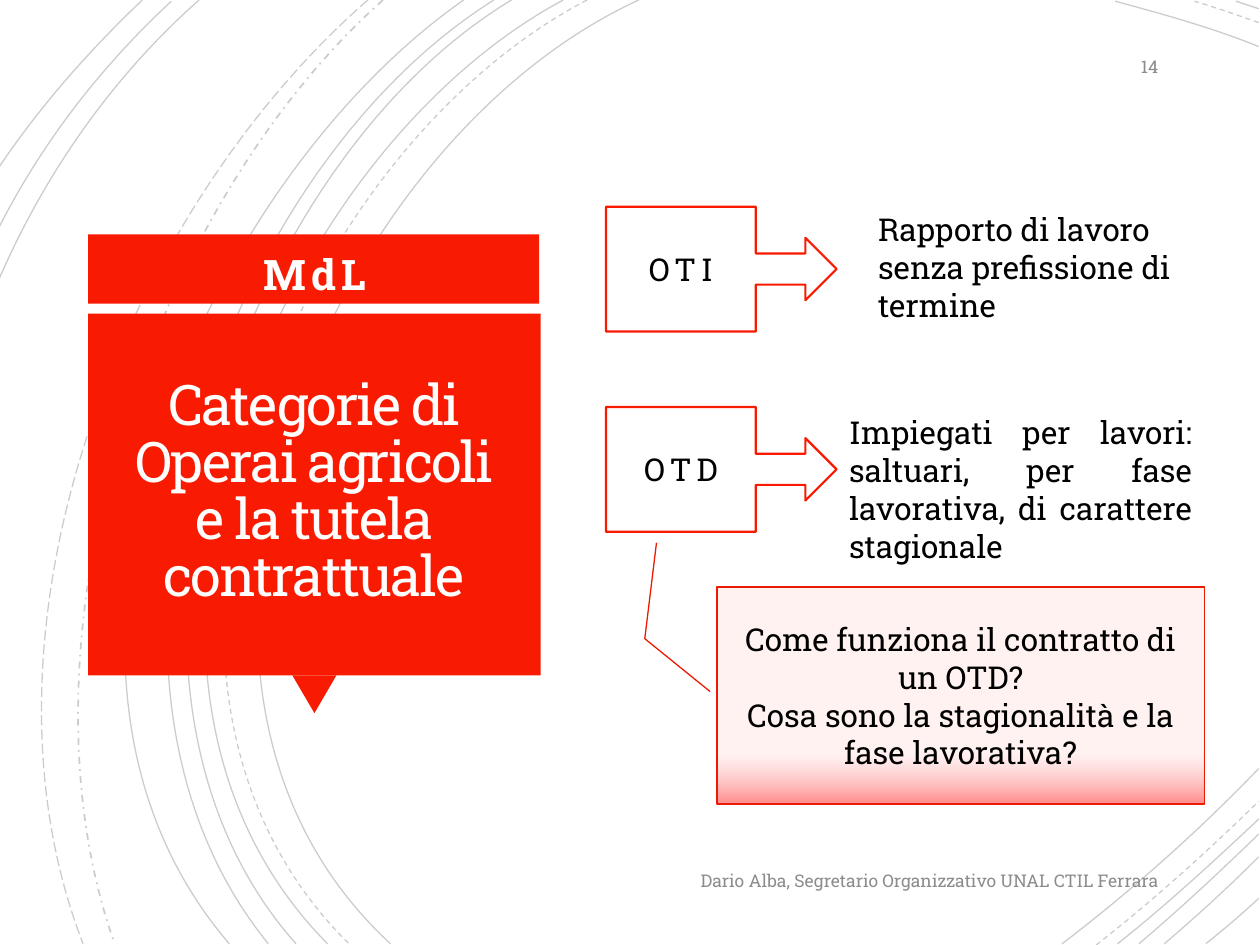
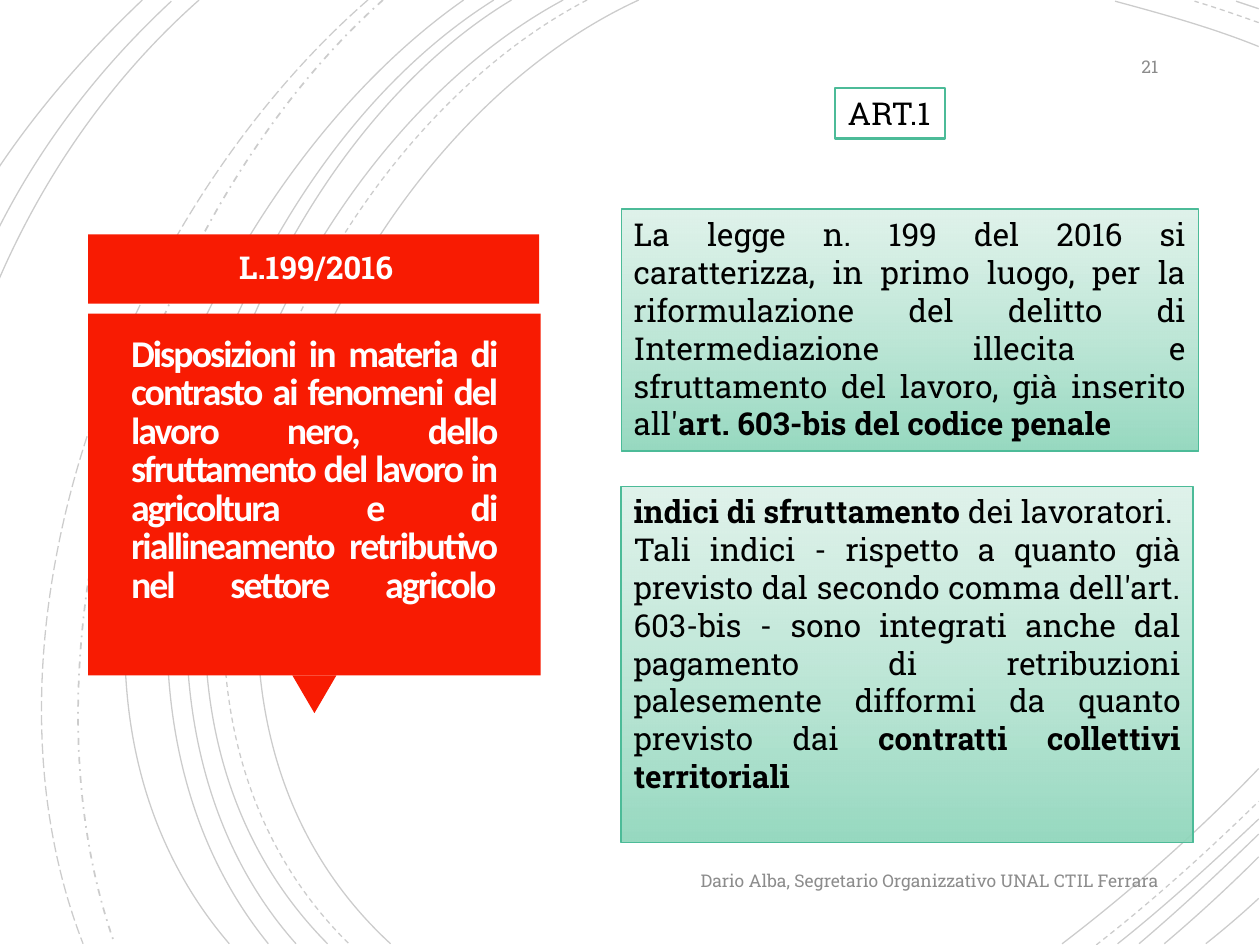
from lxml.etree import SubElement
from pptx import Presentation
from pptx.dml.color import RGBColor
from pptx.enum.dml import MSO_LINE
from pptx.enum.shapes import MSO_SHAPE
from pptx.enum.text import MSO_ANCHOR, MSO_AUTO_SIZE, PP_ALIGN
from pptx.oxml.ns import qn
from pptx.util import Inches, Pt

rgb = RGBColor.from_string
SLAB = "Roboto Slab"
RED, DARK_RED, GREEN = "F81B02", "ED1A02", "4CBB98"
WHITE, TITLE_WHITE, BLACK, GREY = "FFFFFF", "FFFEFF", "000000", "8C8C8C"
LEFT, CENTER, RIGHT, JUSTIFY = PP_ALIGN.LEFT, PP_ALIGN.CENTER, PP_ALIGN.RIGHT, PP_ALIGN.JUSTIFY
TOP, MIDDLE = MSO_ANCHOR.TOP, MSO_ANCHOR.MIDDLE
FOOTER = "Dario Alba, Segretario Organizzativo UNAL CTIL Ferrara"

# Gradient stops: position, colour, opacity in percent
PINK_FADE = [(0.77, "FFCECD", 27), (1, "FF807F", 92)]
GREEN_FADE = [(0, "CAEADD", 60), (1, "8ED6BB", 92)]

# Background arcs: start, two control points, end
SOLID, DASH, DASH_DOT, LONG_DASH = (
    MSO_LINE.SOLID, MSO_LINE.DASH, MSO_LINE.DASH_DOT, MSO_LINE.LONG_DASH)
ARCS = [
    (SOLID, (5.07, 0), (2.56, 1.15), (0.83, 5.4), (3.1, 7.49)),
    (SOLID, (9.99, 0.37), (9.62, 0.22), (9.22, 0.11), (8.85, 0.01)),
    (SOLID, (8.43, 7.49), (8.98, 7.07), (9.51, 6.6), (9.99, 6.1)),
    (DASH, (4.66, 0), (2.26, 1.25), (0.63, 5.38), (2.77, 7.49)),
    (DASH, (9.99, 0.18), (9.82, 0.12), (9.65, 0.06), (9.48, 0.01)),
    (DASH, (8.7, 7.5), (9.15, 7.15), (9.58, 6.76), (9.99, 6.36)),
    (SOLID, (4.47, 0), (2.11, 1.27), (0.5, 5.37), (2.6, 7.49)),
    (SOLID, (9.99, 0.07), (9.93, 0.05), (9.87, 0.03), (9.81, 0.01)),
    (SOLID, (8.87, 7.49), (9.26, 7.18), (9.63, 6.84), (9.99, 6.5)),
    (SOLID, (4.06, 0), (1.85, 1.33), (0.5, 5.41), (2.35, 7.49)),
    (SOLID, (9.04, 7.49), (9.37, 7.21), (9.68, 6.92), (9.99, 6.62)),
    (SOLID, (3.92, 0), (1.72, 1.38), (0.38, 5.34), (2.13, 7.49)),
    (SOLID, (9.24, 7.49), (9.5, 7.27), (9.75, 7.04), (9.99, 6.8)),
    (SOLID, (3.68, 0), (1.58, 1.47), (-0.07, 5.29), (1.82, 7.49)),
    (SOLID, (9.57, 7.49), (9.71, 7.38), (9.85, 7.26), (9.99, 7.13)),
    (DASH_DOT, (3.04, 0), (1.17, 1.66), (0.06, 5.09), (0.91, 7.49)),
    (LONG_DASH, (2.92, 0), (0.98, 1.69), (-0.31, 4.99), (0.66, 7.49)),
    (SOLID, (1.58, 0), (0.88, 0.62), (0.35, 1.39), (-0.01, 2.22)),
    (SOLID, (1.36, 0.01), (0.79, 0.54), (0.33, 1.14), (-0.01, 1.81)),
    (SOLID, (1.13, 0), (0.71, 0.4), (0.32, 0.84), (-0.01, 1.33)),
]


def add_box(s, kind, at, fill, line=None, width=0.75):
    """Add a preset shape; fill is one colour or a list of gradient stops."""
    sp = s.shapes.add_shape(kind, *map(Inches, at))
    sp.shadow.inherit = False
    if isinstance(fill, str):
        sp.fill.solid()
        sp.fill.fore_color.rgb = rgb(fill)
    else:
        sp.fill.gradient()
        sp.fill.gradient_angle = 270
        for stop, (position, color, opacity) in zip(sp.fill.gradient_stops, fill):
            stop.position = position
            stop.color.rgb = rgb(color)
        colors = sp._element.spPr.iter(qn("a:srgbClr"))
        for element, (position, color, opacity) in zip(colors, fill):
            SubElement(element, qn("a:alpha"), val=str(opacity * 1000))
    if line:
        sp.line.color.rgb = rgb(line)
        sp.line.width = Pt(width)
    else:
        sp.line.fill.background()
    return sp


def write(sp, paragraphs, size=18, color=BLACK, font=SLAB, anchor=TOP, spacing=0, wrap=True):
    """Fill a shape with paragraphs of (alignment, (text, bold), ...)."""
    tf = sp.text_frame
    tf.word_wrap = wrap
    tf.vertical_anchor = anchor
    if not wrap:
        tf.auto_size = MSO_AUTO_SIZE.SHAPE_TO_FIT_TEXT
    for i, (align, *runs) in enumerate(paragraphs):
        p = tf.add_paragraph() if i else tf.paragraphs[0]
        p.alignment = align
        p.font.name, p.font.size = font, Pt(size)
        p.font.color.rgb = rgb(color)
        for text, bold in runs:
            r = p.add_run()
            r.text = text
            r.font.bold = bold
            if spacing:
                r._r.get_or_add_rPr().set("spc", str(round(spacing * 100)))
    return tf


prs = Presentation()
prs.slide_width, prs.slide_height = Inches(10), Inches(7.5)

# Shared parts: arcs, red title block, footer, slide number and title
TITLES = [
    ("14", "Categorie di Operai agricoli e la tutela contrattuale", CENTER, 32, SLAB, False),
    ("21", "Disposizioni in materia di contrasto ai fenomeni del lavoro nero, dello sfruttamento "
     "del lavoro in agricoltura e di riallineamento retributivo nel settore agricolo",
     JUSTIFY, 21.6, "Calibri", True),
]
for number, title, align, size, font, bold in TITLES:
    s = prs.slides.add_slide(prs.slide_layouts[6])
    for dash, *points in ARCS:
        start, *rest = [(Inches(x), Inches(y)) for x, y in points]
        builder = s.shapes.build_freeform(*start)
        builder.add_line_segments(rest, close=False)
        sp = builder.convert_to_shape()
        sp.shadow.inherit = False
        sp.fill.background()
        sp.line.color.rgb = rgb(BLACK)
        sp.line.width = Pt(1 if dash == DASH_DOT else 0.75)
        sp.line.dash_style = dash
        SubElement(next(sp._element.spPr.iter(qn("a:srgbClr"))), qn("a:alpha"), val="20000")
        # Turn the three segments into one Bézier curve
        outline = next(sp._element.iter(qn("a:path")))
        curve = SubElement(outline, qn("a:cubicBezTo"))
        for segment in outline.findall(qn("a:lnTo")):
            curve.append(segment[0])
            outline.remove(segment)

    add_box(s, MSO_SHAPE.RECTANGLE, (0.7, 1.86, 3.58, 0.55), RED)
    add_box(s, MSO_SHAPE.ISOSCELES_TRIANGLE, (2.32, 5.36, 0.35, 0.3), RED).rotation = 180
    add_box(s, MSO_SHAPE.RECTANGLE, (0.7, 2.49, 3.59, 2.87), RED)

    sp = s.shapes.add_textbox(Inches(0.79), Inches(2.57), Inches(3.4), Inches(2.7))
    tf = write(sp, [(align, (title, bold))], size, TITLE_WHITE, font, MIDDLE, -1.1)
    tf.margin_left = tf.margin_right = tf.margin_top = tf.margin_bottom = Inches(0.25)
    p = tf.paragraphs[0]
    p.line_spacing = 0.85
    if align == JUSTIFY:
        p.add_line_break()  # stretches the last line too

    for text, left, top, width in [(FOOTER, 0.7, 6.81, 8.59), (number, 8.54, 0.35, 0.75)]:
        sp = s.shapes.add_textbox(Inches(left), Inches(top), Inches(width), Inches(0.35))
        write(sp, [(RIGHT, (text, False))], 10, GREY, anchor=MIDDLE)

contracts, law = prs.slides

# Slide 14: worker categories
sp = contracts.shapes.add_textbox(Inches(1.35), Inches(1.92), Inches(2.3), Inches(0.5))
write(sp, [(CENTER, ("MdL", True))], 24, WHITE, spacing=3)

CATEGORIES = [
    ("OTI", 1.64, (6.87, 1.62, 2.69, 1.01), LEFT,
     "Rapporto di lavoro senza prefissione di termine"),
    ("OTD", 3.23, (6.64, 3.23, 2.92, 1.31), JUSTIFY,
     "Impiegati per lavori: saltuari, per fase lavorativa, di carattere stagionale"),
]
for name, top, at, align, meaning in CATEGORIES:
    sp = add_box(contracts, MSO_SHAPE.RIGHT_ARROW_CALLOUT, (4.81, top, 1.83, 0.99),
                 WHITE, RED, 1.25)
    write(sp, [(CENTER, (name, False))], anchor=MIDDLE, spacing=3)
    sp = contracts.shapes.add_textbox(*map(Inches, at))
    write(sp, [(align, (meaning, False))])

sp = add_box(contracts, MSO_SHAPE.LINE_CALLOUT_2, (5.69, 4.66, 3.87, 1.72), PINK_FADE, DARK_RED)
for i, value in enumerate([0.482, -0.014, 0.238, -0.148, -0.205, -0.124]):
    sp.adjustments[i] = value
write(sp, [(CENTER, ("Come funziona il contratto di un OTD?", False)),
           (CENTER, ("Cosa sono la stagionalità e la fase lavorativa?", False))], anchor=MIDDLE)

# Slide 21: law 199/2016
sp = add_box(law, MSO_SHAPE.RECTANGLE, (4.93, 1.66, 4.58, 1.92), GREEN_FADE, GREEN)
write(sp, [(JUSTIFY,
            ("La legge n. 199 del 2016 si caratterizza, in primo luogo, per la riformulazione "
             "del delitto di Intermediazione illecita e sfruttamento del lavoro, già inserito "
             "all'", False),
            ("art. 603-bis del codice penale", True))])

sp = add_box(law, MSO_SHAPE.RECTANGLE, (4.93, 3.86, 4.54, 2.83), GREEN_FADE, GREEN)
write(sp, [(CENTER, ("indici di sfruttamento", True), (" dei lavoratori. ", False)),
           (JUSTIFY,
            ("Tali indici - rispetto a quanto già previsto dal secondo comma dell'art. 603-bis "
             "- sono integrati anche dal pagamento di retribuzioni palesemente difformi da "
             "quanto previsto dai ", False),
            ("contratti collettivi territoriali", True))])

sp = add_box(law, MSO_SHAPE.RECTANGLE, (6.63, 0.7, 0.87, 0.4), WHITE, GREEN, 1.25)
write(sp, [(LEFT, ("ART.1", False))], wrap=False)

sp = law.shapes.add_textbox(Inches(1.8), Inches(1.92), Inches(1.55), Inches(0.4))
write(sp, [(LEFT, ("L.199/2016", True))], color=WHITE, wrap=False)

prs.save("out.pptx")
